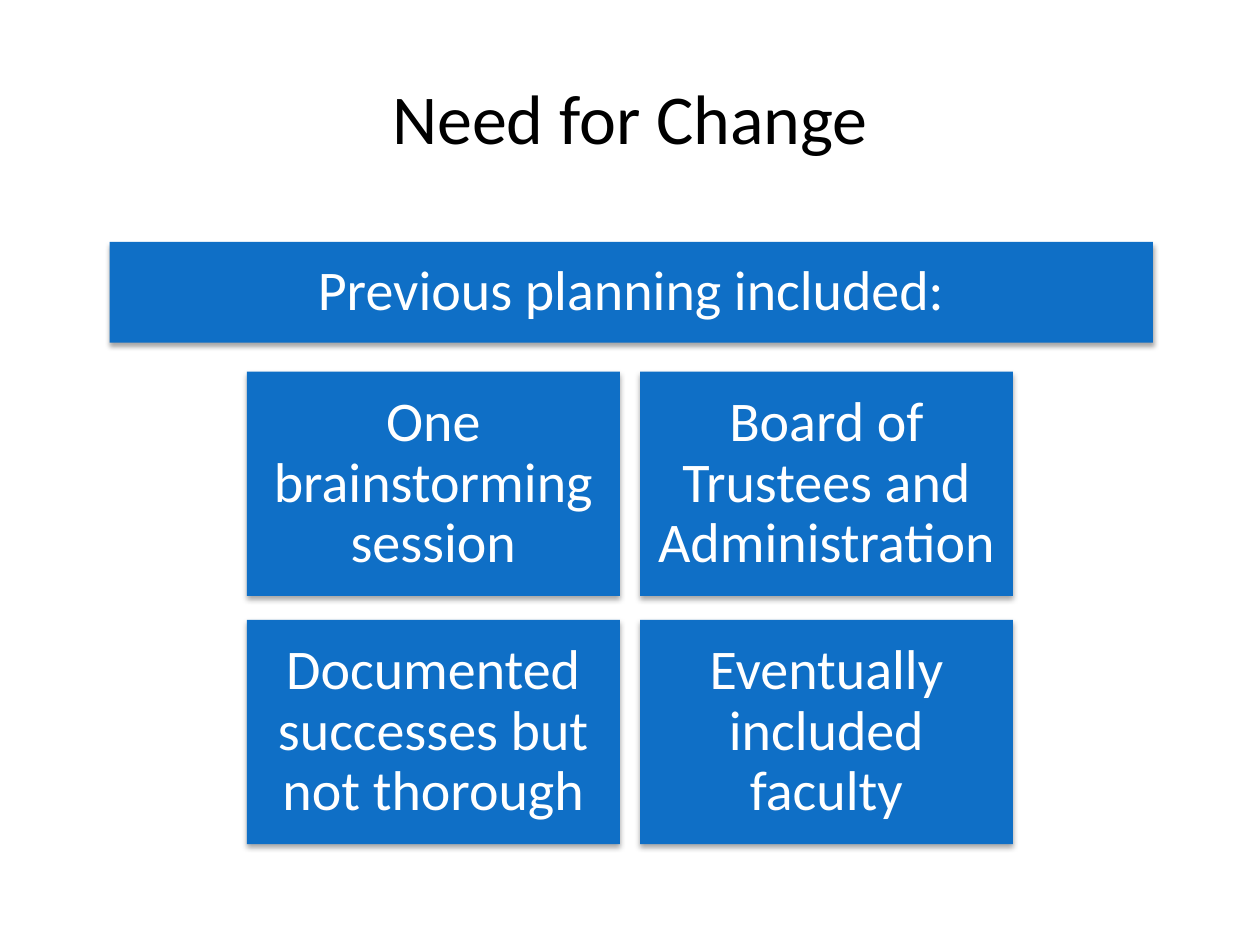
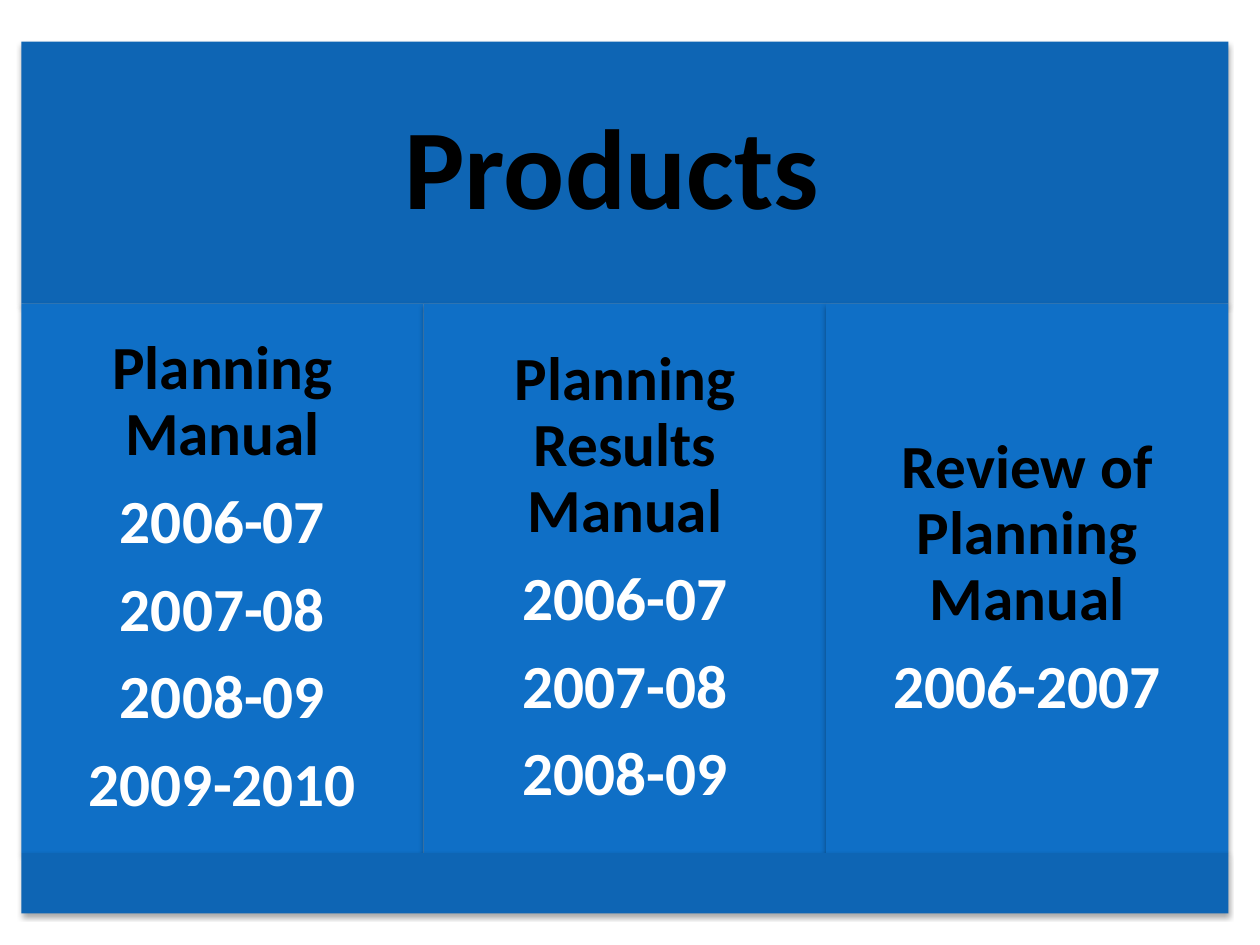
from lxml import etree
from pptx import Presentation
from pptx.dml.color import RGBColor
from pptx.enum.shapes import MSO_SHAPE
from pptx.enum.text import MSO_ANCHOR, PP_ALIGN
from pptx.oxml.ns import qn
from pptx.util import Inches, Pt

RECTANGLE = MSO_SHAPE.RECTANGLE
MIDDLE = MSO_ANCHOR.MIDDLE
CENTER = PP_ALIGN.CENTER

FONT = "Calibri"
BLACK, WHITE = "000000", "FFFFFF"
BLUE, DARK_BLUE = "0F6FC6", "0E65B4"
SLIDE_WIDTH, SLIDE_HEIGHT = 10, 7.5

PLANNING_STEPS = [
    ["One brainstorming session", "Board of Trustees and Administration"],
    ["Documented successes but not thorough", "Eventually included faculty"],
]
PRODUCTS = [
    ("Planning Manual", ["2006-07", "2007-08", "2008-09", "2009-2010"]),
    ("Planning Results Manual", ["2006-07", "2007-08", "2008-09"]),
    ("Review of Planning Manual", ["2006-2007"]),
]


def color(value):
    """Turn a hex string into a colour."""
    return RGBColor.from_string(value)


def add_shadow(box):
    """Give a box a soft shadow straight below it."""
    box.shadow.inherit = False
    effects = box._element.spPr.find(qn("a:effectLst"))
    shadow = etree.SubElement(
        effects, qn("a:outerShdw"), blurRad=str(Pt(3.1)), dist=str(Pt(1.8)),
        dir="5400000", rotWithShape="0")
    tint = etree.SubElement(shadow, qn("a:srgbClr"), val=BLACK)
    etree.SubElement(tint, qn("a:alpha"), val="35000")


def write(box, lines, size, inset, bold=False, spacing=0.9, after=0.35):
    """Write centred (text, colour) lines; after is a share of the size."""
    frame = box.text_frame
    frame.word_wrap = True
    frame.vertical_anchor = MIDDLE
    frame.margin_left = frame.margin_right = Inches(inset)
    frame.margin_top = frame.margin_bottom = Inches(inset)
    for index, (text, ink) in enumerate(lines):
        para = frame.add_paragraph() if index else frame.paragraphs[0]
        para.alignment = CENTER
        para.line_spacing = spacing
        para.space_after = Pt(size * after)
        span = para.add_run()
        span.text = text
        span.font.name = FONT
        span.font.size = Pt(size)
        span.font.bold = bold
        span.font.color.rgb = color(ink)


def add_panel(page, area, fill):
    """Add a plain filled rectangle with a shadow."""
    panel = page.shapes.add_shape(RECTANGLE, *map(Inches, area))
    panel.fill.solid()
    panel.fill.fore_color.rgb = color(fill)
    panel.line.fill.background()
    add_shadow(panel)
    return panel


def add_title(page, text):
    """Add the slide title."""
    margin = SLIDE_WIDTH * 0.05
    area = (margin, SLIDE_HEIGHT * 0.04, SLIDE_WIDTH - 2 * margin, SLIDE_HEIGHT / 6)
    box = page.shapes.add_textbox(*map(Inches, area))
    write(box, [(text, BLACK)], 40, 0.1, spacing=1, after=0)


def build_need_for_change(page):
    """Build the planning tiles below their heading bar."""
    left, top, width, height = 1.96, 2.95, 2.96, 1.78
    column_gap, row_gap = 0.16, 0.19
    add_title(page, "Need for Change")
    for row, steps in enumerate(PLANNING_STEPS):
        for column, step in enumerate(steps):
            area = (left + column * (width + column_gap),
                    top + row * (height + row_gap), width, height)
            write(add_panel(page, area, BLUE), [(step, WHITE)], 32, 0.13)
    heading = add_panel(page, (0.87, 1.92, 8.28, 0.8), BLUE)
    write(heading, [("Previous planning included:", WHITE)], 32, 0.13)


def build_products(page):
    """Build a header band, one column per product and a base band."""
    left, top, width = 0.17, 0.33, 9.58
    header_height, column_height, base_height = 2.08, 4.36, 0.48
    column_top = top + header_height
    column_width = width / len(PRODUCTS)
    header = add_panel(page, (left, top, width, header_height), DARK_BLUE)
    write(header, [("Products ", BLACK)], 65, 0.27, bold=True)
    for index, (product, years) in enumerate(PRODUCTS):
        area = (left + index * column_width, column_top, column_width, column_height)
        lines = [(product, BLACK)] + [(year, WHITE) for year in years]
        write(add_panel(page, area, BLUE), lines, 35, 0.15, bold=True)
    add_panel(page, (left, column_top + column_height, width, base_height), DARK_BLUE)


def main():
    """Build and save the deck."""
    deck = Presentation()
    deck.slide_width = Inches(SLIDE_WIDTH)
    deck.slide_height = Inches(SLIDE_HEIGHT)
    blank = deck.slide_layouts[6]
    for build in (build_need_for_change, build_products):
        build(deck.slides.add_slide(blank))
    deck.save("out.pptx")


if __name__ == "__main__":
    main()
